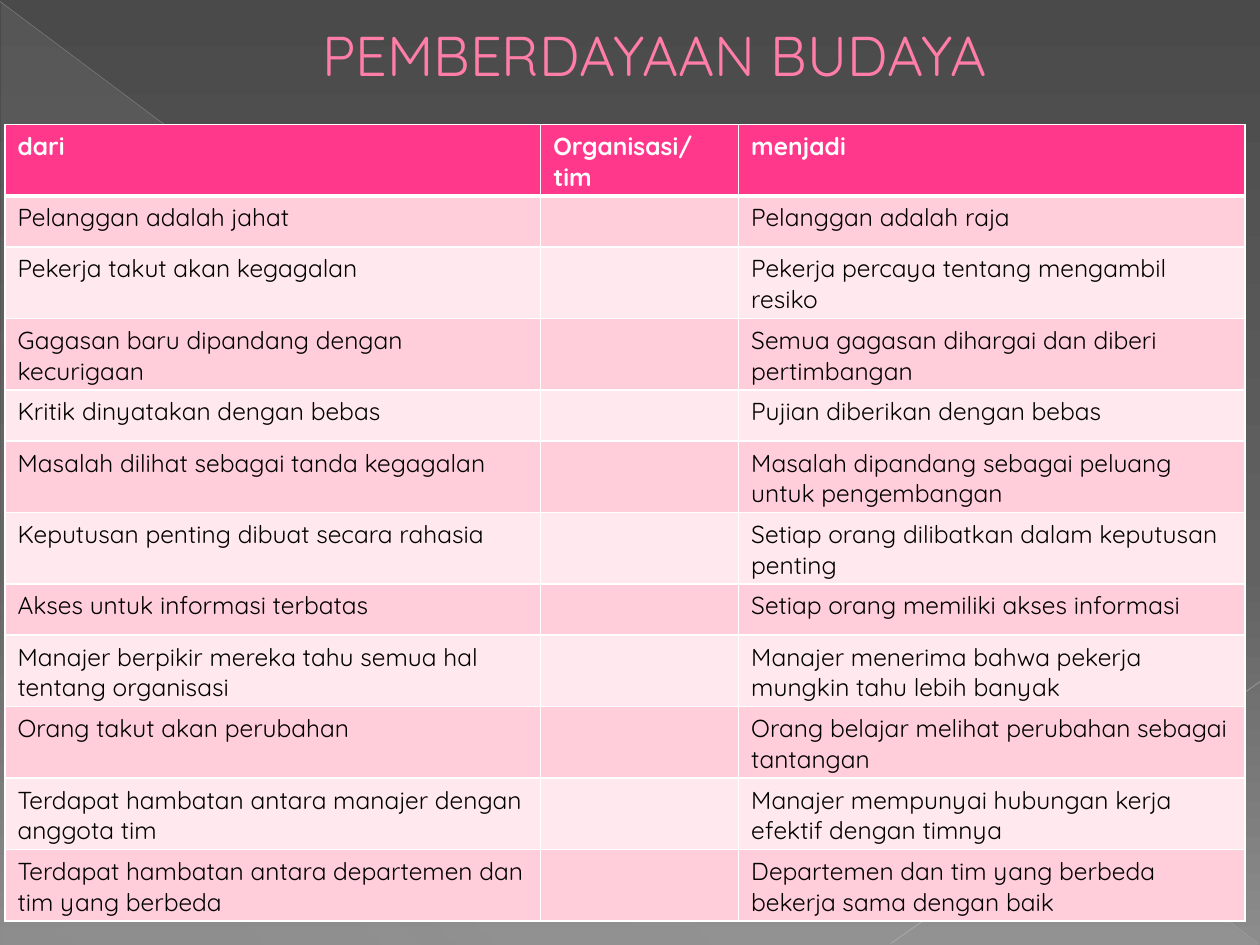
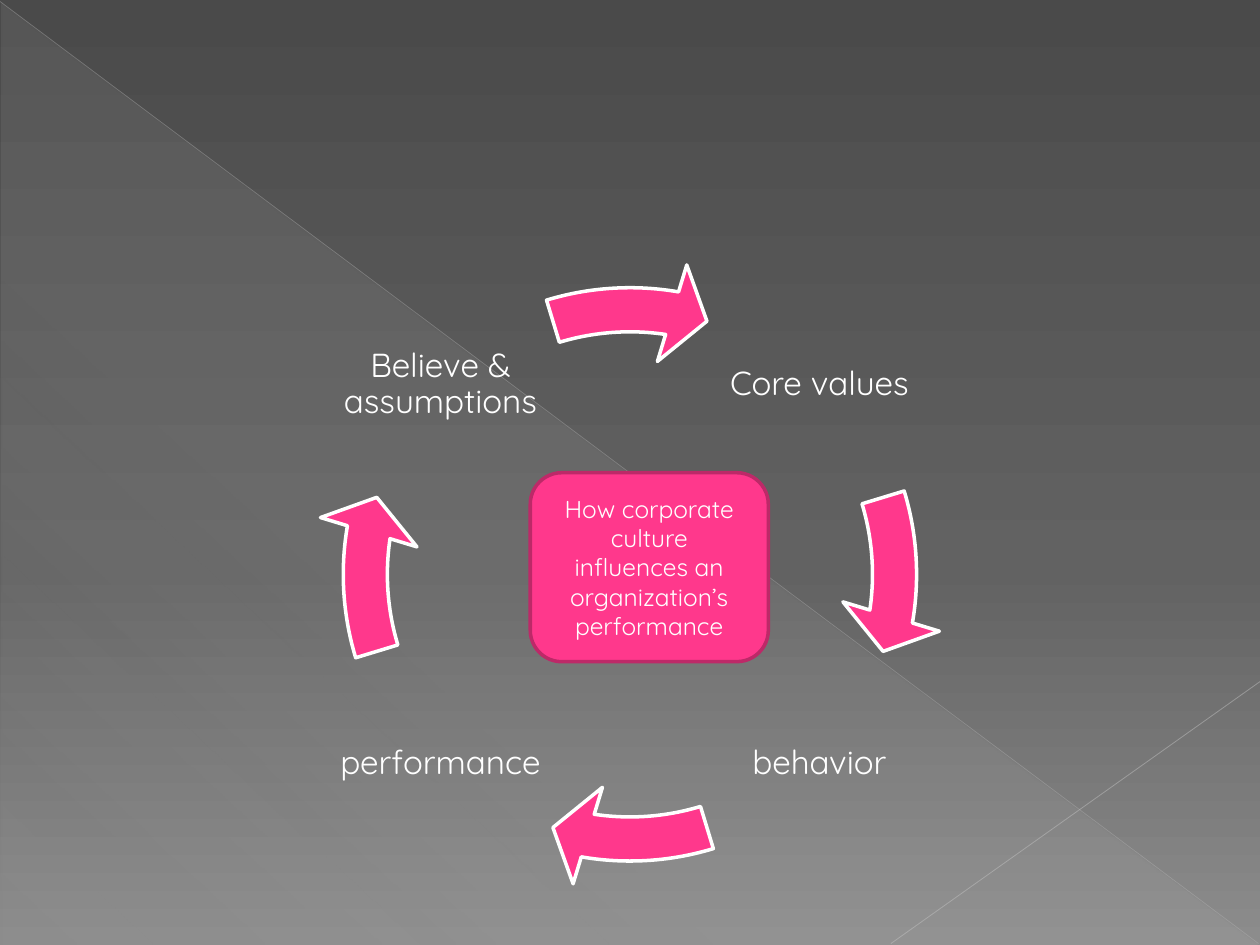
import pptx
import pptx.util
import pptx.dml.color
import pptx.enum.shapes
import pptx.enum.text
import pptx.oxml
import pptx.oxml.ns
from dataclasses import dataclass
from pptx.util import Cm, Pt

TITLE = "PEMBERDAYAAN BUDAYA"
HEADINGS = ("dari", "Organisasi/tim", "menjadi")
CHANGES = [
    ("Pelanggan adalah jahat", "Pelanggan adalah raja"),
    ("Pekerja takut akan kegagalan", "Pekerja percaya tentang mengambil resiko"),
    ("Gagasan baru dipandang dengan kecurigaan", "Semua gagasan dihargai dan diberi pertimbangan"),
    ("Kritik dinyatakan dengan bebas", "Pujian diberikan dengan bebas"),
    ("Masalah dilihat sebagai tanda kegagalan", "Masalah dipandang sebagai peluang untuk pengembangan"),
    ("Keputusan penting dibuat secara rahasia", "Setiap orang dilibatkan dalam keputusan penting"),
    ("Akses untuk informasi terbatas", "Setiap orang memiliki akses informasi"),
    ("Manajer berpikir mereka tahu semua hal tentang organisasi",
     "Manajer menerima bahwa pekerja mungkin tahu lebih banyak"),
    ("Orang takut akan perubahan", "Orang belajar melihat perubahan sebagai tantangan"),
    ("Terdapat hambatan antara manajer dengan anggota tim",
     "Manajer mempunyai hubungan kerja efektif dengan timnya"),
    ("Terdapat hambatan antara departemen dan tim yang berbeda",
     "Departemen dan tim yang berbeda bekerja sama dengan baik"),
]
COLUMN_WIDTHS = (10.8, 3.99, 10.21)
CYCLE = [
    ("Core values", 1, -1),
    ("behavior", 1, 1),
    ("performance", -1, 1),
    ("Believe & assumptions", -1, -1),
]
CYCLE_CORE = "How corporate culture influences an organization’s performance"
DIAGONALS = [
    ((0, 0.03), (25.37, 19.02), "BFBFBF", 0.39, 35),
    ((25.4, 13.74), (17.96, 19.02), "C6C6C6", 0.47, 45),
]


@dataclass(frozen=True)
class Theme:
    font: str = "Quicksand"
    title: str = "FF7DA7"
    title_edge: str = "B12761"
    accent: str = "FF388C"
    accent_edge: str = "BD2968"
    bands: tuple = ("FFCEDA", "FFE8EE")
    white: str = "FFFFFF"
    black: str = "000000"
    background: tuple = ((0, "4A4A4A", 100), (60, "626262", 100), (100, "8C8C8C", 100))
    wedge: tuple = ((0, "D2D2D2", 10), (70, "D2D2D2", 8), (100, "D2D2D2", 1))
    title_size: int = 32
    label_size: int = 19
    body_size: int = 14


THEME = Theme()
SHAPES = pptx.enum.shapes.MSO_SHAPE
QN = pptx.oxml.ns.qn
NAMESPACE = pptx.oxml.ns.nsdecls("a")


def rgb(color):
    return pptx.dml.color.RGBColor.from_string(color)


def xml(markup):
    tag, rest = markup.split(" ", 1) if " " in markup.split(">")[0] else (markup[:-2], "/>")
    return pptx.oxml.parse_xml(f"{tag} {NAMESPACE} {rest}")


def fill_gradient(fill, owner, stops, angle):
    fill.gradient()
    gradient = owner.find(".//" + QN("a:gradFill"))
    for child in list(gradient):
        gradient.remove(child)
    marks = "".join(
        f'<a:gs pos="{position * 1000}"><a:srgbClr val="{color}">'
        f'<a:alpha val="{opacity * 1000}"/></a:srgbClr></a:gs>'
        for position, color, opacity in stops)
    gradient.append(pptx.oxml.parse_xml(f"<a:gsLst {NAMESPACE}>{marks}</a:gsLst>"))
    gradient.append(xml(f'<a:lin ang="{angle * 60000}" scaled="0"/>'))


def paint(shape, fill, edge, width=2):
    shape.shadow.inherit = False
    shape.fill.solid()
    shape.fill.fore_color.rgb = rgb(fill)
    shape.line.color.rgb = rgb(edge)
    shape.line.width = Pt(width)


def write(frame, text, size, color, bold=False, centred=True):
    frame.text = text
    frame.word_wrap = True
    para = frame.paragraphs[0]
    if centred:
        frame.vertical_anchor = pptx.enum.text.MSO_ANCHOR.MIDDLE
        para.alignment = pptx.enum.text.PP_ALIGN.CENTER
    for span in para.runs:
        span.font.name = THEME.font
        span.font.size = Pt(size)
        span.font.bold = bold
        span.font.color.rgb = rgb(color)
    return para


def add_page(deck):
    page = deck.slides.add_slide(deck.slide_layouts[6])
    wedge = page.shapes.add_shape(SHAPES.RIGHT_TRIANGLE, Cm(0.03), Cm(0.05), Cm(25.35), Cm(19))
    wedge.shadow.inherit = False
    wedge.line.fill.background()
    fill_gradient(wedge.fill, wedge._element.spPr, THEME.wedge, 133)
    for start, end, color, width, opacity in DIAGONALS:
        line = page.shapes.add_connector(
            pptx.enum.shapes.MSO_CONNECTOR.STRAIGHT, *map(Cm, start + end))
        line.line.color.rgb = rgb(color)
        line.line.width = Pt(width)
        properties = line._element.spPr
        properties.find(".//" + QN("a:srgbClr")).append(xml(f'<a:alpha val="{opacity * 1000}"/>'))
        properties.append(xml("<a:effectLst/>"))
    return page


def add_title(page):
    box = page.shapes.add_textbox(Cm(1.09), Cm(-0.86), Cm(22.86), Cm(3.89))
    para = write(box.text_frame, TITLE, THEME.title_size, THEME.title)
    para._p.get_or_add_pPr().set("marL", str(Cm(1.35)))
    outline = pptx.oxml.parse_xml(
        f'<a:ln {NAMESPACE} w="{Pt(0.5)}"><a:solidFill>'
        f'<a:srgbClr val="{THEME.title_edge}"/></a:solidFill></a:ln>')
    para.runs[0]._r.get_or_add_rPr().insert(0, outline)


def border_cell(cell, top, bottom):
    properties = cell._tc.get_or_add_tcPr()
    for side, width in (("L", 1), ("R", 1), ("T", top), ("B", bottom)):
        properties.append(pptx.oxml.parse_xml(
            f'<a:ln{side} {NAMESPACE} w="{Pt(width)}"><a:solidFill>'
            f'<a:srgbClr val="{THEME.white}"/></a:solidFill></a:ln{side}>'))


def add_change_table(page):
    rows = [HEADINGS] + [(before, "", after) for before, after in CHANGES]
    row_height = Cm(1.03)
    table = page.shapes.add_table(
        len(rows), len(HEADINGS), Cm(0.1), Cm(2.51),
        Cm(sum(COLUMN_WIDTHS)), row_height * len(rows)).table
    for column, width in zip(table.columns, COLUMN_WIDTHS):
        column.width = Cm(width)
    for index, texts in enumerate(rows):
        table.rows[index].height = row_height
        heading = index == 0
        fill = THEME.accent if heading else THEME.bands[(index - 1) % 2]
        for column, text in enumerate(texts):
            cell = table.cell(index, column)
            border_cell(cell, 3 if index == 1 else 1, 3 if heading else 1)
            cell.fill.solid()
            cell.fill.fore_color.rgb = rgb(fill)
            if text:
                write(cell.text_frame, text, THEME.body_size,
                      THEME.white if heading else THEME.black, heading, False)


def add_cycle(page):
    center_x, center_y, radius = 12.7, 11.58, 6.35
    offset, label_side = 3.82, 4.5
    quarter, full_turn = 54, 216
    group = page.shapes.add_group_shape()
    for index, (text, across, down) in enumerate(CYCLE):
        label = group.shapes.add_textbox(
            Cm(center_x + across * offset - label_side / 2),
            Cm(center_y + down * offset - label_side / 2), Cm(label_side), Cm(label_side))
        frame = label.text_frame
        frame.margin_left = frame.margin_right = frame.margin_top = frame.margin_bottom = Cm(0.08)
        write(frame, text, THEME.label_size, THEME.white).line_spacing = 0.9

        arrow = group.shapes.add_shape(
            SHAPES.CIRCULAR_ARROW, Cm(center_x - radius), Cm(center_y - radius),
            Cm(2 * radius), Cm(2 * radius))
        turn = index * quarter
        angles = (0.07, 4.65, 5.5 + turn, (205.85 + turn) % full_turn, 0.08)
        for position, value in enumerate(angles):
            arrow.adjustments[position] = value
        paint(arrow, THEME.accent, THEME.white)

    core = page.shapes.add_shape(SHAPES.ROUNDED_RECTANGLE, Cm(10.69), Cm(9.53), Cm(4.8), Cm(3.81))
    paint(core, THEME.accent, THEME.accent_edge)
    write(core.text_frame, CYCLE_CORE, THEME.body_size, THEME.white)


def main():
    deck = pptx.Presentation()
    deck.slide_width, deck.slide_height = Cm(25.4), Cm(19.05)
    master = deck.slide_master
    fill_gradient(master.background.fill, master._element.cSld, THEME.background, 90)
    change_page = add_page(deck)
    add_title(change_page)
    add_change_table(change_page)
    add_cycle(add_page(deck))
    deck.save("out.pptx")


if __name__ == "__main__":
    main()
